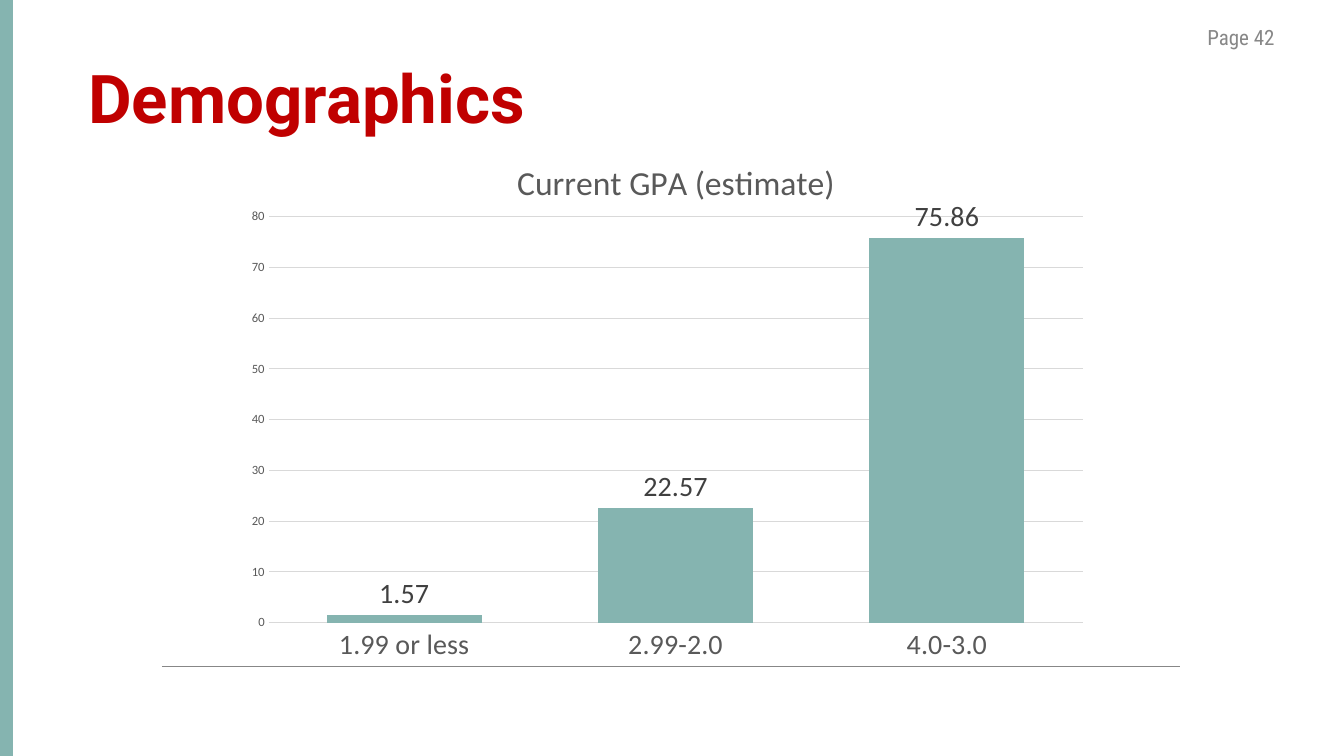
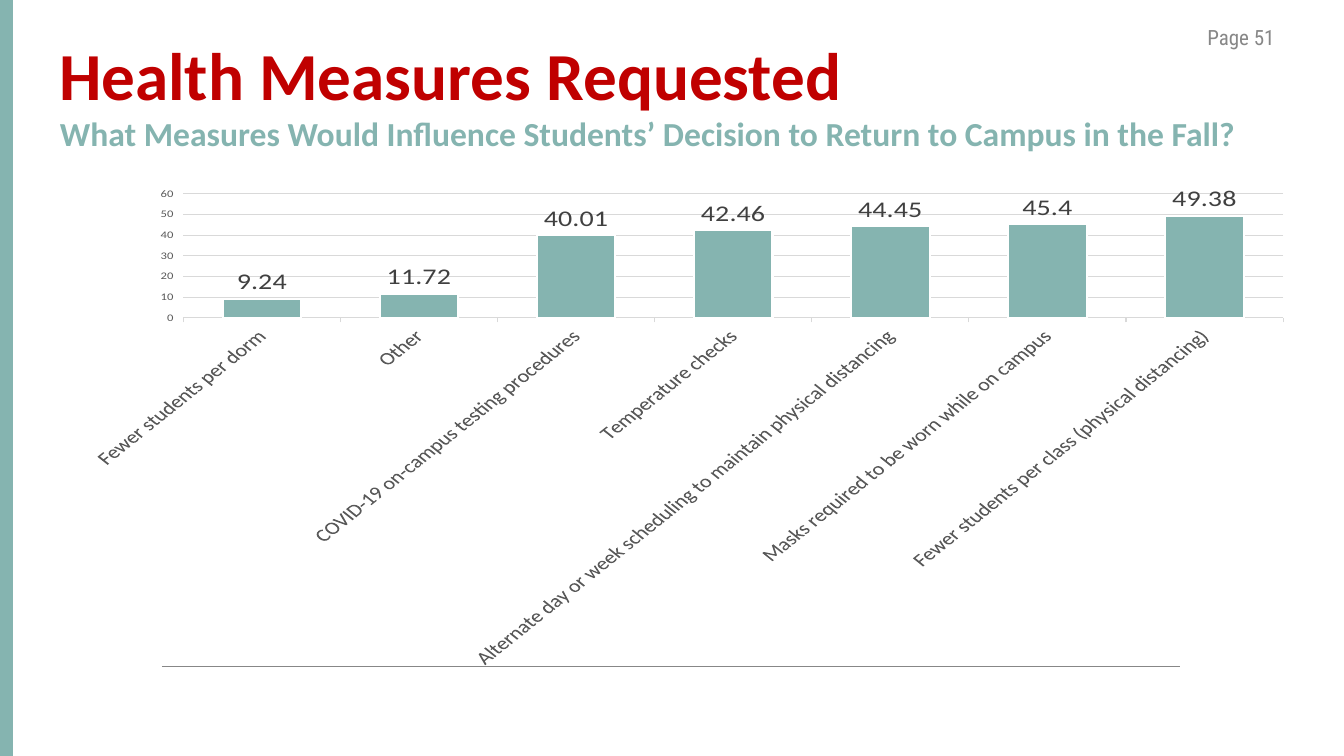
from dataclasses import dataclass

from lxml import etree
from pptx import Presentation
from pptx.chart.data import CategoryChartData
from pptx.dml.color import RGBColor
from pptx.enum.chart import XL_CHART_TYPE, XL_LABEL_POSITION, XL_TICK_MARK
from pptx.enum.shapes import MSO_CONNECTOR, MSO_SHAPE
from pptx.enum.text import MSO_ANCHOR, PP_ALIGN
from pptx.oxml.ns import qn
from pptx.util import Emu, Pt

COLUMNS = XL_CHART_TYPE.COLUMN_CLUSTERED
OUTSIDE_END = XL_LABEL_POSITION.OUTSIDE_END
TICK_NONE, TICK_OUT = XL_TICK_MARK.NONE, XL_TICK_MARK.OUTSIDE
STRAIGHT, RECT = MSO_CONNECTOR.STRAIGHT, MSO_SHAPE.RECTANGLE
TOP, CENTER = MSO_ANCHOR.TOP, PP_ALIGN.CENTER
TITLE_ONLY = 5
WIDTH, HEIGHT = 1344, 756


@dataclass(frozen=True)
class Theme:
    # Colours
    accent: str = "85B4B0"
    title: str = "C00000"
    muted: str = "878787"
    axis_text: str = "595959"
    label_text: str = "404040"
    grid: str = "D9D9D9"
    white: str = "FFFFFF"
    # Fonts
    body_font: str = "Calibri"
    title_font: str = "Roboto"
    page_font: str = "Roboto Condensed"
    # Type sizes
    title_size: int = 48
    subtitle_size: int = 24
    label_size: int = 20
    page_size: int = 15
    scale_size: int = 9


def px(n):
    """Turn slide pixels into EMU."""
    return Emu(round(n * 914400 / 100.8))


def rgb(color):
    return RGBColor.from_string(color)


def style_font(font, size, color, name, bold=False):
    font.size, font.name, font.bold = Pt(size), name, bold
    font.color.rgb = rgb(color)


def style_line(line, color, width):
    line.color.rgb = rgb(color)
    line.width = Pt(width)


def write(tf, text, *, size, color, font, bold=False, align=None, spacing=None):
    p = tf.paragraphs[0]
    p.alignment, p.line_spacing = align, spacing
    r = p.add_run()
    r.text = text
    style_font(r.font, size, color, font, bold)


def set_layout(parent, index, **fractions):
    """Place a chart part by fractions of the chart's size."""
    for old in parent.findall(qn("c:layout")):
        parent.remove(old)
    layout = etree.Element(qn("c:layout"))
    manual = etree.SubElement(layout, qn("c:manualLayout"))
    if "w" in fractions:
        etree.SubElement(manual, qn("c:layoutTarget"), val="inner")
    for side in "xy":
        etree.SubElement(manual, qn(f"c:{side}Mode"), val="edge")
    for key, value in fractions.items():
        etree.SubElement(manual, qn(f"c:{key}"), val=str(value))
    parent.insert(index, layout)


class Deck:
    def __init__(self, theme):
        self.theme = theme
        self.prs = Presentation()
        self.prs.slide_width, self.prs.slide_height = px(WIDTH), px(HEIGHT)
        self.s = None

    def slide(self, page):
        """Start a slide with its side band, page number and footer rule."""
        t = self.theme
        self.s = self.prs.slides.add_slide(self.prs.slide_layouts[TITLE_ONLY])
        self.text(f"Page {page}", (1178, 20, 126, 40), size=t.page_size,
                  color=t.muted, font=t.page_font, align=CENTER)
        self.band(0, 0, 13, HEIGHT)
        self.rule(162, 1180, 666)

    def band(self, *box):
        sp = self.s.shapes.add_shape(RECT, *map(px, box))
        sp.shadow.inherit = False
        sp.fill.solid()
        sp.fill.fore_color.rgb = rgb(self.theme.accent)
        sp.line.fill.background()

    def rule(self, left, right, y):
        sp = self.s.shapes.add_connector(STRAIGHT, px(left), px(y), px(right), px(y))
        style_line(sp.line, self.theme.muted, 0.5)
        etree.SubElement(sp._element.spPr, qn("a:effectLst"))

    def text(self, text, box, **fmt):
        sp = self.s.shapes.add_textbox(*map(px, box))
        sp.text_frame.word_wrap = True
        write(sp.text_frame, text, **fmt)

    def title(self, text, box, font):
        t = self.theme
        sp = self.s.shapes.title
        sp.left, sp.top, sp.width, sp.height = map(px, box)
        tf = sp.text_frame
        tf.word_wrap, tf.vertical_anchor = True, TOP
        write(tf, text, size=t.title_size, color=t.title, font=font, bold=True,
              align=PP_ALIGN.LEFT)

    def subtitle(self, text, box):
        t = self.theme
        self.text(text, box, size=t.subtitle_size, color=t.accent,
                  font=t.body_font, bold=True, spacing=0.9)

    def chart(self, values, box, *, top, gap, overlap=0, category_size, tick,
              title=None, outline=None, rotation=None, layout=None):
        t = self.theme
        data = CategoryChartData()
        data.categories = list(values)
        data.add_series("Series 1", list(values.values()))
        chart = self.s.shapes.add_chart(COLUMNS, *map(px, box), data).chart
        style_font(chart.font, 10, t.axis_text, t.body_font)
        chart.has_legend = False

        # Chart title
        chart.has_title = title is not None
        if title:
            write(chart.chart_title.text_frame, title, size=t.subtitle_size,
                  color=t.axis_text, font=t.body_font)
            set_layout(chart.chart_title._element, 1, x=0.32, y=0.04)

        # Columns and their values
        plot = chart.plots[0]
        plot.gap_width, plot.overlap, plot.vary_by_categories = gap, overlap, False
        series = plot.series[0]
        series.format.fill.solid()
        series.format.fill.fore_color.rgb = rgb(t.accent)
        if outline:
            style_line(series.format.line, outline, 1.5)
        labels = series.data_labels
        labels.show_value, labels.position = True, OUTSIDE_END
        style_font(labels.font, t.label_size, t.label_text, t.body_font)

        # Axes
        cat, val = chart.category_axis, chart.value_axis
        for axis, size in ((cat, category_size), (val, t.scale_size)):
            axis.major_tick_mark, axis.minor_tick_mark = tick, TICK_NONE
            style_font(axis.tick_labels.font, size, t.axis_text, t.body_font)
        style_line(cat.format.line, t.grid, 0.75)
        if rotation is not None:
            body = cat._element.find(qn("c:txPr")).find(qn("a:bodyPr"))
            body.set("rot", str(rotation * 60000))
            body.set("vert", "horz")
        val.minimum_scale, val.maximum_scale, val.major_unit = 0, top, 10
        val.format.line.fill.background()
        style_line(val.major_gridlines.format.line, t.grid, 0.75)
        if layout:
            plot_area = chart._chartSpace.chart.plotArea
            set_layout(plot_area, 0, **layout)


def main():
    theme = Theme()
    deck = Deck(theme)

    # Grade averages
    deck.slide(42)
    deck.title("Demographics", (78, 51, 759, 88), theme.title_font)
    deck.chart({"1.99 or less": 1.57, "2.99-2.0": 22.57, "4.0-3.0": 75.86},
               (234, 132, 866, 540), top=80, gap=75, overlap=40,
               category_size=20, tick=TICK_NONE, title="Current GPA (estimate)",
               layout={"x": 0.04, "y": 0.157, "w": 0.94, "h": 0.752})

    # Health measures
    deck.slide(51)
    deck.subtitle("What Measures Would Influence Students’ Decision to Return "
                  "to Campus in the Fall?", (50, 113, 1257, 50))
    deck.title("Health Measures Requested", (49, 28, 839, 88), theme.body_font)
    measures = {
        "Fewer students per dorm": 9.24,
        "Other": 11.72,
        "COVID-19 on-campus testing procedures": 40.01,
        "Temperature checks": 42.46,
        "Alternate day or week scheduling to maintain physical distancing": 44.45,
        "Masks required to be worn while on campus": 45.4,
        "Fewer students per class (physical distancing)": 49.38,
    }
    deck.chart(measures, (67, 185, 1241, 484), top=60, gap=100,
               category_size=16, tick=TICK_OUT, outline=theme.white, rotation=-45)

    deck.prs.save("out.pptx")


if __name__ == "__main__":
    main()
